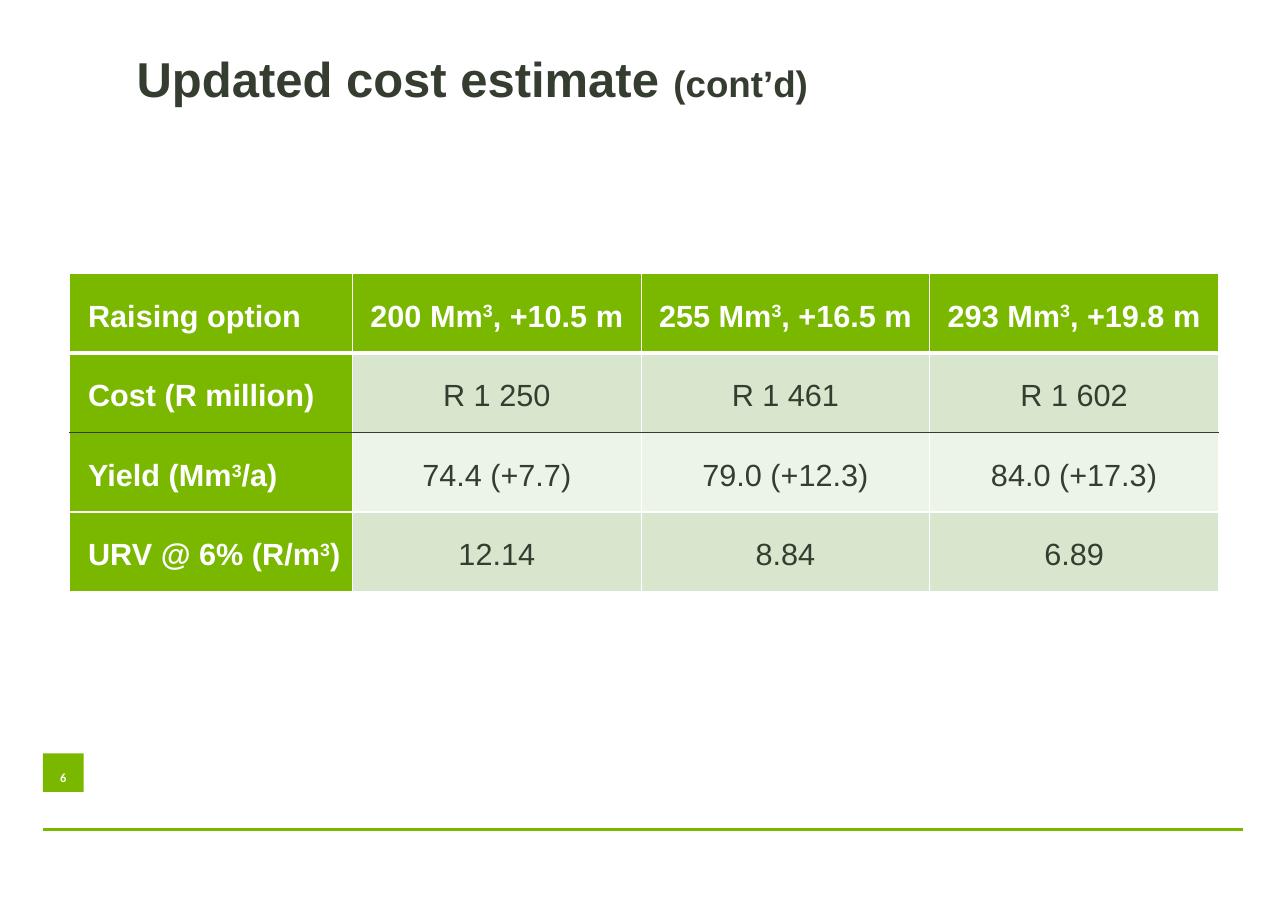
from lxml.etree import SubElement
from pptx import Presentation
from pptx.dml.color import RGBColor
from pptx.enum.shapes import MSO_CONNECTOR, MSO_SHAPE
from pptx.enum.text import MSO_ANCHOR, MSO_AUTO_SIZE, PP_ALIGN
from pptx.oxml.ns import qn
from pptx.util import Inches, Pt

GREEN, DARK, WHITE = "7AB800", "353D30", "FFFFFF"
BANDS = ("D7E6CC", "ECF3E7")
SUPERSCRIPT, SUBSCRIPT = 30, -25
COLUMN_WIDTHS = (2.57, 2.62, 2.62, 2.62)
ROWS = (
    ("Raising option", "200 Mm^3^, +10.5 m", "255 Mm^3^, +16.5 m", "293 Mm^3^, +19.8 m"),
    ("Cost (R million)", "R 1 250", "R 1 461", "R 1 602"),
    ("Yield (Mm^3^/a)", "74.4 (+7.7)", "79.0 (+12.3)", "84.0 (+17.3)"),
    ("URV @ 6% (R/m^3^)", "12.14", "8.84", "6.89"),
)
RULES = ((WHITE, 1), (WHITE, 3), (DARK, 1), (WHITE, 1), (WHITE, 1))


def color(value):
    """Turn a hex string into a colour."""
    return RGBColor.from_string(value)


def add_run(paragraph, text, size, fill, bold=True, font="Arial", baseline=0):
    """Append one formatted run to a paragraph."""
    run = paragraph.add_run()
    run.text = text
    run.font.name, run.font.size, run.font.bold = font, Pt(size), bold
    run.font.color.rgb = color(fill)
    if baseline:
        run._r.get_or_add_rPr().set("baseline", str(baseline * 1000))


def add_borders(cell, top, bottom):
    """Draw the four borders of a cell, white at the sides."""
    properties = cell._tc.get_or_add_tcPr()
    sides = {"a:lnL": (WHITE, 1), "a:lnR": (WHITE, 1), "a:lnT": top, "a:lnB": bottom}
    for tag, (line_color, width) in sides.items():
        line = SubElement(properties, qn(tag), w=str(Pt(width)))
        SubElement(SubElement(line, qn("a:solidFill")), qn("a:srgbClr"), val=line_color)


def add_title(slide, left, top, width, height):
    """Place the title with its smaller suffix."""
    title = slide.shapes.title
    title.left, title.top = Inches(left), Inches(top)
    title.width, title.height = Inches(width), Inches(height)
    frame = title.text_frame
    frame.auto_size = MSO_AUTO_SIZE.NONE
    frame.vertical_anchor = MSO_ANCHOR.TOP
    paragraph = frame.paragraphs[0]
    paragraph.alignment = PP_ALIGN.LEFT
    add_run(paragraph, "Updated cost estimate ", 32, DARK)
    add_run(paragraph, "(cont’d)", 24, DARK)


def fill_cell(cell, text, row, column):
    """Format one table cell according to its row and column."""
    heading = row == 0 or column == 0
    cell.vertical_anchor = MSO_ANCHOR.MIDDLE
    cell.margin_left = Inches(0.02 if column else 0.17)
    cell.margin_right = Inches(0.02)
    cell.margin_top = cell.margin_bottom = Inches(0.04)
    add_borders(cell, RULES[row], RULES[row + 1])
    cell.fill.solid()
    cell.fill.fore_color.rgb = color(GREEN if heading else BANDS[(row - 1) % 2])
    paragraph = cell.text_frame.paragraphs[0]
    paragraph.alignment = PP_ALIGN.CENTER if column else PP_ALIGN.JUSTIFY
    paragraph.line_spacing = 1.2
    for index, part in enumerate(text.split("^")):
        add_run(paragraph, part, 20, WHITE if heading else DARK, heading,
                baseline=SUPERSCRIPT if index % 2 else 0)


def add_cost_table(slide, left, top, width, height):
    """Add the table comparing the raising options."""
    table = slide.shapes.add_table(len(ROWS), len(COLUMN_WIDTHS), Inches(left), Inches(top),
                                   Inches(width), Inches(height)).table
    for column, column_width in zip(table.columns, COLUMN_WIDTHS):
        column.width = Inches(column_width)
    for row, texts in enumerate(ROWS):
        table.rows[row].height = Inches(height / len(ROWS))
        for column, text in enumerate(texts):
            fill_cell(table.cell(row, column), text, row, column)


def add_footer(slide, left, top, width, height):
    """Add the page number box above the footer line."""
    line = slide.shapes.add_connector(MSO_CONNECTOR.STRAIGHT, Inches(left), Inches(top + height),
                                      Inches(left + width), Inches(top + height))
    line.line.color.rgb = color(GREEN)
    line.line.width = Pt(1.5)
    SubElement(line._element.spPr, qn("a:effectLst"))
    box = slide.shapes.add_shape(MSO_SHAPE.RECTANGLE, Inches(left), Inches(top),
                                 Inches(0.37), Inches(0.35))
    box.shadow.inherit = False
    box.fill.solid()
    box.fill.fore_color.rgb = color(GREEN)
    box.line.fill.background()
    frame = box.text_frame
    frame.margin_left = frame.margin_right = frame.margin_top = 0
    frame.margin_bottom = Inches(0.04)
    frame.vertical_anchor = MSO_ANCHOR.MIDDLE
    paragraph = frame.paragraphs[0]
    paragraph.alignment = PP_ALIGN.CENTER
    add_run(paragraph, "6", 14, WHITE, font="Calibri", baseline=SUBSCRIPT)


def main():
    """Build the slide and save it."""
    presentation = Presentation()
    presentation.slide_width, presentation.slide_height = Inches(11.69), Inches(8.27)
    slide = presentation.slides.add_slide(presentation.slide_layouts[5])
    add_footer(slide, 0.39, 6.84, 10.89, 0.69)
    add_title(slide, 1.14, 0.39, 8.88, 0.98)
    add_cost_table(slide, 0.63, 2.48, sum(COLUMN_WIDTHS), 2.89)
    presentation.save("out.pptx")


if __name__ == "__main__":
    main()
